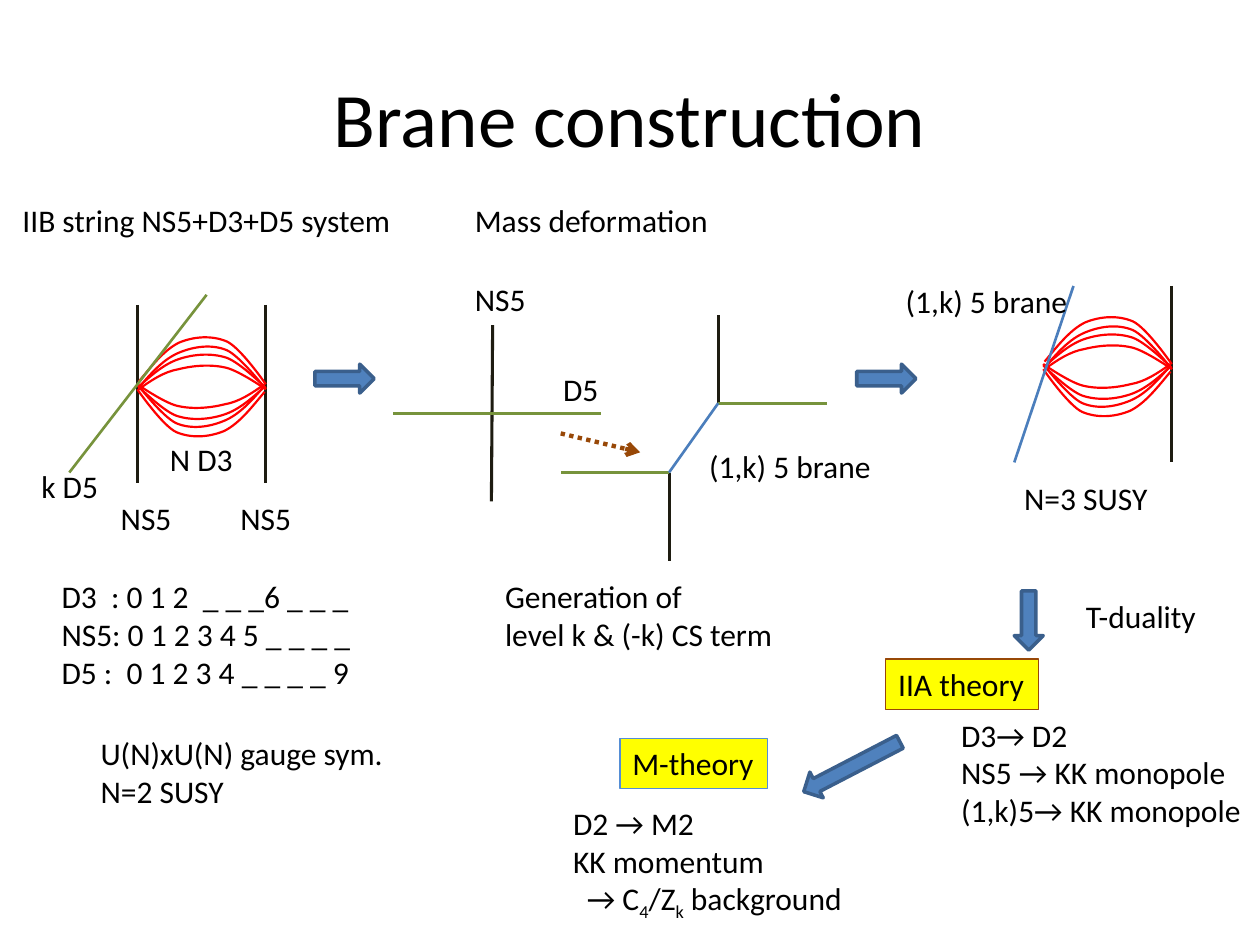
import lxml.etree
import pptx
import pptx.dml.color
import pptx.enum.dml
import pptx.enum.shapes
import pptx.enum.text
import pptx.oxml.ns
import pptx.util
from pptx.util import Inches

BLACK, GREEN, BLUE, BROWN = "1E1C11", "77933C", "4B7EBC", "984807"


def color(hex_string):
    return pptx.dml.color.RGBColor.from_string(hex_string)


def add_line(x1, y1, x2, y2, line_color, width):
    connector = slide.shapes.add_connector(
        pptx.enum.shapes.MSO_CONNECTOR.STRAIGHT,
        Inches(x1), Inches(y1), Inches(x2), Inches(y2))
    connector.line.color.rgb = color(line_color)
    connector.line.width = pptx.util.Pt(width)
    lxml.etree.SubElement(connector._element.spPr, pptx.oxml.ns.qn("a:effectLst"))
    return connector


presentation = pptx.Presentation()
presentation.slide_width = Inches(10)
presentation.slide_height = Inches(7.5)
slide = presentation.slides.add_slide(presentation.slide_layouts[6])

# NS5 branes
for x1, y1, x2, y2 in [
    (1.09, 2.42, 1.09, 3.83),
    (2.11, 2.42, 2.11, 3.83),
    (5.7, 2.5, 5.7, 3.2),
    (5.31, 4.45, 5.31, 3.75),
    (3.91, 2.58, 3.9, 3.98),
    (9.3, 2.27, 9.3, 3.67),
]:
    add_line(x1, y1, x2, y2, BLACK, 1.75)

# D3 strands: Bezier points relative to the bundle centre; the lower half is
# the upper half turned by 180 degrees.
strand_x = [-0.5, -0.4, -0.3, -0.18, -0.06, 0.08, 0.2, 0.31, 0.51, 0.51]
strand_heights = [
    [0, -0.09, -0.18, -0.22, -0.26, -0.27, -0.23, -0.19, 0.01, 0.01],
    [0.01, -0.11, -0.22, -0.27, -0.32, -0.34, -0.29, -0.24, 0.02, 0.02],
    [0.02, -0.05, -0.12, -0.14, -0.17, -0.18, -0.15, -0.12, 0.02, 0.02],
    [-0.04, -0.16, -0.29, -0.35, -0.4, -0.41, -0.36, -0.31, -0.02, -0.02],
]
for center_x, center_y in [(1.6, 3.07), (8.79, 2.91)]:
    for direction in (1, -1):
        for strand_y in strand_heights:
            points = [(Inches(center_x + direction * x), Inches(center_y + direction * y))
                      for x, y in zip(strand_x, strand_y)]
            builder = slide.shapes.build_freeform(*points[0])
            builder.add_line_segments(points[1:], close=False)
            strand = builder.convert_to_shape()
            # Join every three straight segments into one cubic curve
            segments = list(strand._element.iter(pptx.oxml.ns.qn("a:lnTo")))
            for first in range(0, len(segments), 3):
                curve = lxml.etree.Element(pptx.oxml.ns.qn("a:cubicBezTo"))
                segments[first].addprevious(curve)
                for segment in segments[first:first + 3]:
                    curve.append(segment[0])
                    segment.getparent().remove(segment)
            strand.shadow.inherit = False
            strand.fill.background()
            strand.line.color.rgb = color("FF0000")
            strand.line.width = pptx.util.Pt(1.25)

# D5 and (1,k) 5 branes
for x1, y1, x2, y2, line_color in [
    (0.55, 3.75, 1.64, 2.34, GREEN),
    (5.7, 3.2, 6.56, 3.2, GREEN),
    (5.31, 3.75, 4.45, 3.75, GREEN),
    (3.12, 3.28, 4.77, 3.28, GREEN),
    (5.31, 3.75, 5.7, 3.2, BLUE),
    (8.05, 3.67, 8.52, 2.27, BLUE),
]:
    add_line(x1, y1, x2, y2, line_color, 1.5)

deformation_arrow = add_line(4.45, 3.44, 5.08, 3.59, BROWN, 2.5)
deformation_arrow.line.dash_style = pptx.enum.dml.MSO_LINE.ROUND_DOT
lxml.etree.SubElement(deformation_arrow.line._get_or_add_ln(),
                      pptx.oxml.ns.qn("a:tailEnd"), type="arrow")

# Block arrows
RIGHT = pptx.enum.shapes.MSO_SHAPE.RIGHT_ARROW
DOWN = pptx.enum.shapes.MSO_SHAPE.DOWN_ARROW
for kind, left, top, width, height, rotation in [
    (RIGHT, 2.5, 2.89, 0.47, 0.23, 0),
    (RIGHT, 6.8, 2.89, 0.47, 0.23, 0),
    (DOWN, 8.05, 4.69, 0.23, 0.47, 0),
    (RIGHT, 6.33, 5.97, 0.86, 0.23, 152.6),
]:
    arrow = slide.shapes.add_shape(
        kind, Inches(left), Inches(top), Inches(width), Inches(height))
    arrow.rotation = rotation
    arrow.shadow.inherit = False
    arrow.fill.solid()
    arrow.fill.fore_color.rgb = color("4F81BD")
    arrow.line.color.rgb = color("3A5F8C")
    arrow.line.width = pptx.util.Pt(2)

# Title
title = slide.shapes.add_textbox(Inches(0.5), Inches(0.3), Inches(9), Inches(1.25))
title.text_frame.word_wrap = True
title.text_frame.vertical_anchor = pptx.enum.text.MSO_ANCHOR.MIDDLE
title.text_frame.text = "Brane construction"
title_paragraph = title.text_frame.paragraphs[0]
title_paragraph.alignment = pptx.enum.text.PP_ALIGN.CENTER
title_font = title_paragraph.runs[0].font
title_font.name = "Calibri"
title_font.size = pptx.util.Pt(44)
title_font.color.rgb = color("000000")

# Labels: left, top, width, text, border of a highlighted label
for left, top, width, text, border in [
    (0.08, 1.55, 3.15, "IIB string NS5+D3+D5 system", None),
    (0.86, 3.91, 0.61, "NS5", None),
    (1.81, 3.91, 0.61, "NS5", None),
    (0.39, 4.53, 2.75, "D3  : 0 1 2  _ _ _6 _ _ _\nNS5: 0 1 2 3 4 5 _ _ _ _\n"
                       "D5 :  0 1 2 3 4 _ _ _ _ 9", None),
    (0.23, 3.66, 0.66, "k D5", None),
    (1.25, 3.44, 0.71, "N D3", None),
    (0.7, 5.78, 2.47, "U(N)xU(N) gauge sym.\nN=2 SUSY", None),
    (3.67, 1.55, 2.07, "Mass deformation", None),
    (3.67, 2.17, 0.61, "NS5", None),
    (4.37, 2.89, 0.49, "D5", None),
    (5.53, 3.5, 1.5, "(1,k) 5 brane", None),
    (3.91, 4.53, 2.35, "Generation of\nlevel k & (-k) CS term", None),
    (7.09, 2.19, 1.5, "(1,k) 5 brane", None),
    (8.03, 3.75, 1.19, "N=3 SUSY", None),
    (7.03, 5.23, 1.21, "IIA theory", BROWN),
    (8.52, 4.69, 1.1, "T-duality", None),
    (7.53, 5.63, 2.47, "D3→ D2\nNS5 → KK monopole\n(1,k)5→ KK monopole", None),
    (4.92, 5.86, 1.17, "M-theory", "558ED5"),
    (4.45, 6.33, 2.4, "D2 → M2\nKK momentum", None),
]:
    height = 0.1 + 0.3 * (text.count("\n") + 1)
    label = slide.shapes.add_textbox(
        Inches(left), Inches(top), Inches(width), Inches(height))
    label.text_frame.word_wrap = False
    label.text_frame.auto_size = pptx.enum.text.MSO_AUTO_SIZE.SHAPE_TO_FIT_TEXT
    label.text_frame.text = text
    if border:
        label.fill.solid()
        label.fill.fore_color.rgb = color("FFFF00")
        label.line.color.rgb = color(border)
        label.line.width = pptx.util.Pt(0.75)
    if text.startswith("D2 →"):
        label.height = Inches(1.01)
        background = label.text_frame.add_paragraph()
        background._p.get_or_add_pPr().set("marL", str(Inches(0.11)))
        for part in ("→ C", "4", "/Z", "k", " background"):
            run = background.add_run()
            run.text = part
            if part in ("4", "k"):
                run.font._element.set("baseline", "-25000")
    for paragraph in label.text_frame.paragraphs:
        for run in paragraph.runs:
            run.font.name = "Calibri"
            run.font.size = pptx.util.Pt(18)
            run.font.color.rgb = color("000000")

presentation.save("out.pptx")
